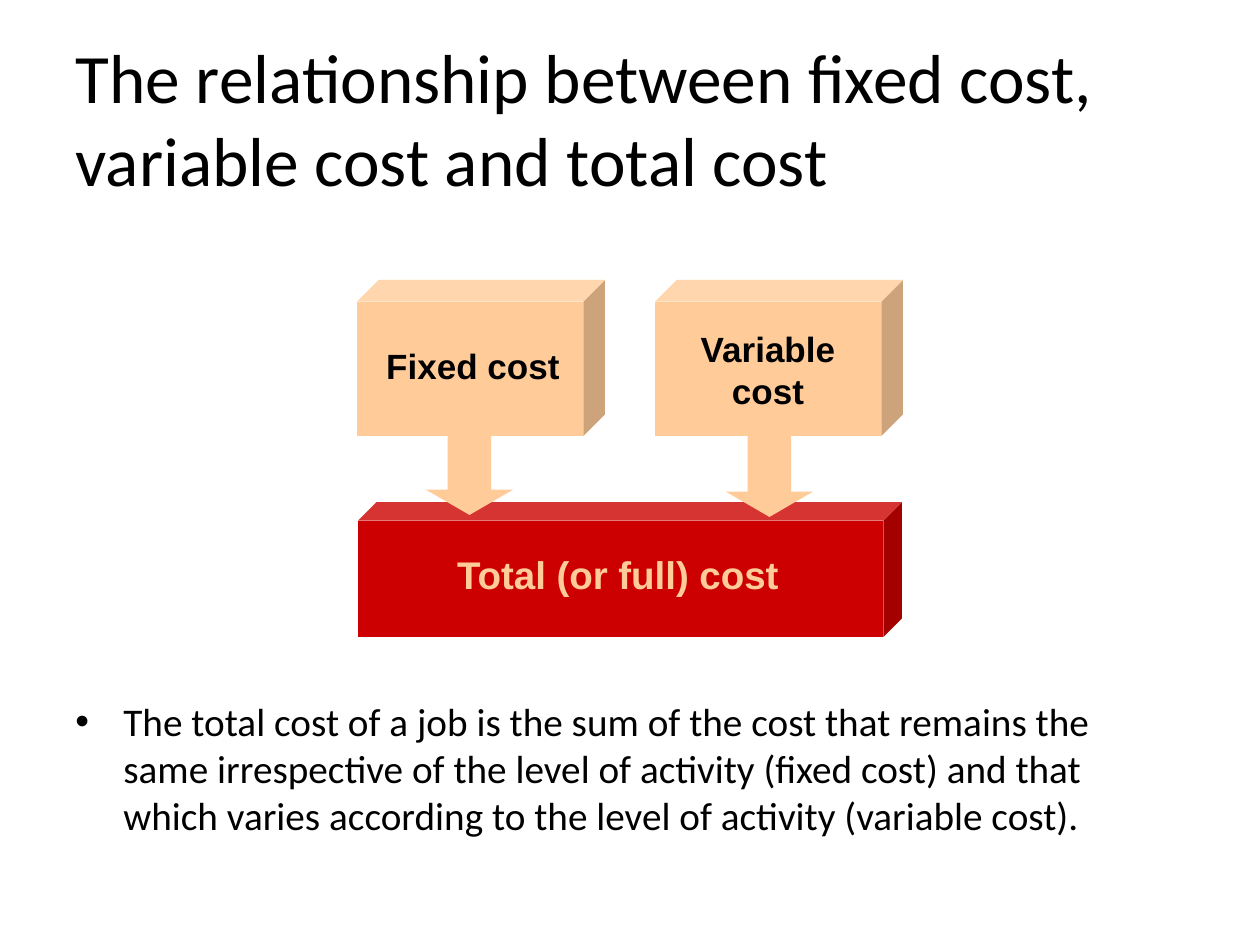
"""Build a slide on how fixed and variable cost make up total cost."""
from lxml import etree
from pptx import Presentation
from pptx.dml.color import RGBColor
from pptx.enum import shapes, text
from pptx.oxml.ns import qn
from pptx.util import Pt

EMU_PER_PX = 914400 / 126
COLOURS = {"ink": "000000", "peach": "FFCC99", "red": "CC0000"}


def px(length):
    """Turn pixels into EMU."""
    return round(length * EMU_PER_PX)


def write(frame, words, size, font, colour="ink", bold=False):
    """Write one formatted run in a wrapping frame and return its paragraph."""
    frame.word_wrap = True
    para = frame.paragraphs[0]
    span = para.add_run()
    span.text = words
    span.font.size = Pt(size)
    span.font.name = font
    span.font.bold = bold
    span.font.color.rgb = RGBColor.from_string(COLOURS[colour])
    return para


def set_title(page, words, place):
    """Place and fill the title placeholder."""
    title = page.shapes.title
    title.left, title.top, title.width, title.height = map(px, place)
    title.text_frame.vertical_anchor = text.MSO_ANCHOR.MIDDLE
    title.text_frame.auto_size = text.MSO_AUTO_SIZE.NONE
    para = write(title.text_frame, words, 39.6, "Calibri")
    para.alignment = text.PP_ALIGN.LEFT


def add_bullet(page, words, place, indent):
    """Add a text box holding one bulleted paragraph."""
    box = page.shapes.add_textbox(*map(px, place))
    para = write(box.text_frame, words, 22.4, "Calibri")
    props = para._p.get_or_add_pPr()
    props.set("marL", str(px(indent)))
    props.set("indent", str(-px(indent)))
    etree.SubElement(props, qn("a:buFont"), typeface="Arial")
    etree.SubElement(props, qn("a:buChar"), char="•")


def add_solid(group, kind, place, colour, adjustments):
    """Add a filled preset shape without outline or shadow."""
    solid = group.shapes.add_shape(kind, *map(px, place))
    solid.shadow.inherit = False
    solid.fill.solid()
    solid.fill.fore_color.rgb = RGBColor.from_string(COLOURS[colour])
    solid.line.fill.background()
    for index, value in enumerate(adjustments):
        solid.adjustments[index] = value


def add_cube(group, place, colour):
    """Add a cube of the common depth."""
    add_solid(group, shapes.MSO_SHAPE.CUBE, place, colour, [0.138])


def add_label(group, words, place, size, colour="ink"):
    """Add a centred bold label."""
    box = group.shapes.add_textbox(*map(px, place))
    box.text_frame.vertical_anchor = text.MSO_ANCHOR.MIDDLE
    para = write(box.text_frame, words, size, "Arial", colour, True)
    para.alignment = text.PP_ALIGN.CENTER


def add_diagram(page):
    """Add the two cost cubes with arrows into the total cube."""
    group = page.shapes.add_group_shape()
    add_cube(group, (358, 502, 544, 135), "red")
    add_label(group, "Total (or full) cost", (399, 545, 438, 59), 22, "peach")
    for place in ((426, 413, 87, 102), (726, 417, 87, 100)):
        add_solid(group, shapes.MSO_SHAPE.DOWN_ARROW, place, "peach", [0.5, 0.29])
    parts = (
        ("Fixed cost", 357, (373, 338, 200, 54)),
        ("Variable cost", 655, (663, 321, 210, 97)),
    )
    for words, left, label_place in parts:
        add_cube(group, (left, 280, 248, 156), "peach")
        add_label(group, words, label_place, 20)


def main():
    """Build and save the deck."""
    deck = Presentation()
    deck.slide_width, deck.slide_height = px(1260), px(945)
    page = deck.slides.add_slide(deck.slide_layouts[5])
    set_title(
        page,
        "The relationship between fixed cost, variable cost and total cost",
        (63, 38, 1134, 158),
    )
    add_bullet(
        page,
        "The total cost of a job is the sum of the cost that remains the same "
        "irrespective of the level of activity (fixed cost) and that which "
        "varies according to the level of activity (variable cost).",
        (63, 691, 1134, 154),
        48,
    )
    add_diagram(page)
    deck.save("out.pptx")


if __name__ == "__main__":
    main()
